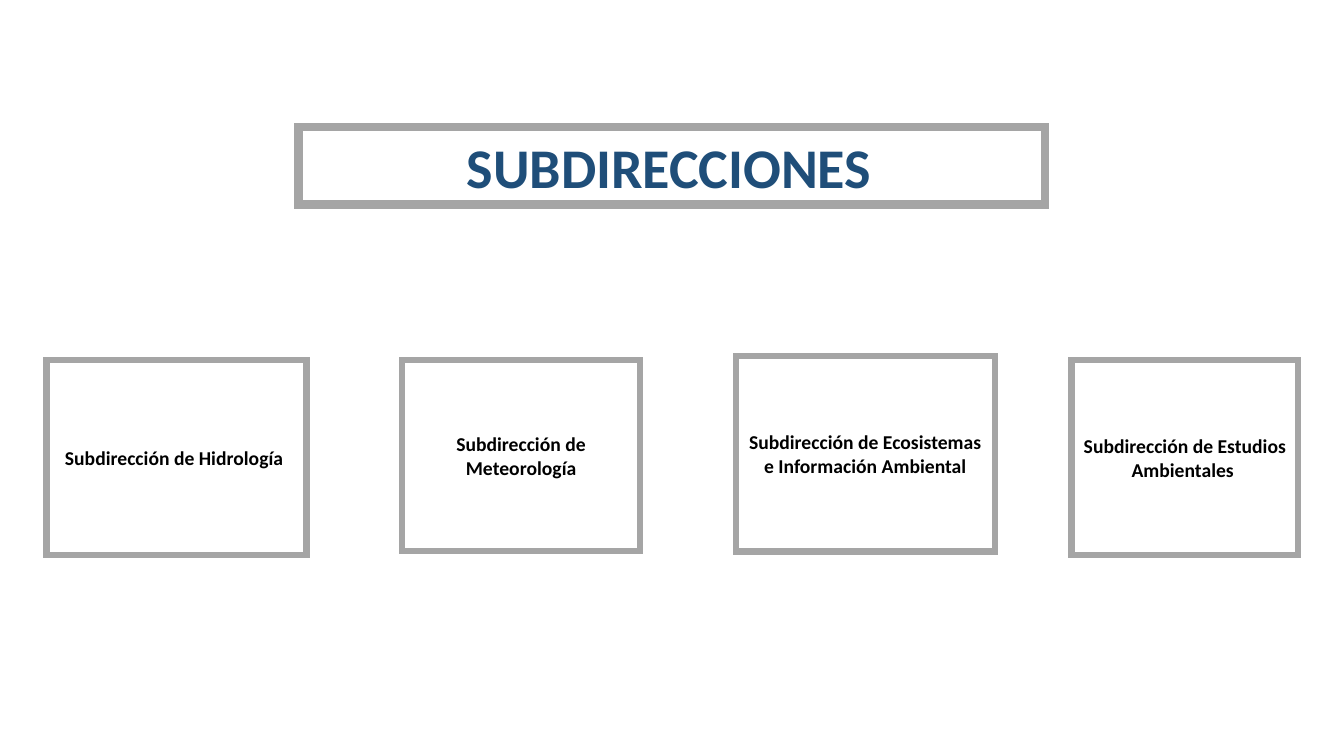
from lxml.etree import SubElement
from pptx import Presentation
from pptx.dml.color import RGBColor
from pptx.enum.shapes import MSO_SHAPE
from pptx.enum.text import MSO_ANCHOR, MSO_AUTO_SIZE, PP_ALIGN
from pptx.oxml.ns import qn
from pptx.util import Pt

TITLE = "SUBDIRECCIONES"
UNITS = [
    ("Subdirección de Hidrología ", 33.1, 257, 185.8, 139.7),
    ("Subdirección de Meteorología", 287.3, 257, 169.9, 136.8),
    ("Subdirección de Ecosistemas e Información Ambiental", 525.6, 254.2, 185, 139.7),
    ("Subdirección de Estudios Ambientales ", 765.4, 257, 162, 139.7),
]
WHITE = RGBColor(0xFF, 0xFF, 0xFF)
BLACK = RGBColor(0, 0, 0)
GRAY = RGBColor(0xA5, 0xA5, 0xA5)
NAVY = RGBColor(0x1F, 0x4E, 0x79)


def write(shape, text, size=14, color=BLACK, anchor=MSO_ANCHOR.MIDDLE, right=7.2):
    frame = shape.text_frame
    frame.word_wrap = True
    frame.auto_size = MSO_AUTO_SIZE.NONE
    frame.vertical_anchor = anchor
    frame.margin_left = Pt(7.2)
    frame.margin_right = Pt(right)
    frame.margin_top = frame.margin_bottom = Pt(3.6)
    line = frame.paragraphs[0]
    line.alignment = PP_ALIGN.CENTER
    run = line.add_run()
    run.text = text
    run.font.name = "Calibri"
    run.font.size = Pt(size)
    run.font.bold = True
    run.font.color.rgb = color


def edge(shape, width):
    shape.fill.solid()
    shape.fill.fore_color.rgb = WHITE
    shape.line.color.rgb = GRAY
    shape.line.width = Pt(width)
    outline = shape.element.spPr.find(qn("a:ln"))
    SubElement(outline, qn("a:miter"), lim="800000")


deck = Presentation()
deck.slide_width, deck.slide_height = Pt(960), Pt(540)
slide = deck.slides.add_slide(deck.slide_layouts[5])

title = slide.shapes.title
title.left, title.top = Pt(213.1), Pt(90.7)
title.width, title.height = Pt(533.5), Pt(55.4)
edge(title, 6)
write(title, TITLE, size=40, color=NAVY, anchor=MSO_ANCHOR.TOP, right=11.2)

for name, *place in UNITS:
    box = slide.shapes.add_shape(MSO_SHAPE.RECTANGLE, *map(Pt, place))
    box.shadow.inherit = False
    edge(box, 4.5)
    write(box, name)

deck.save("out.pptx")
